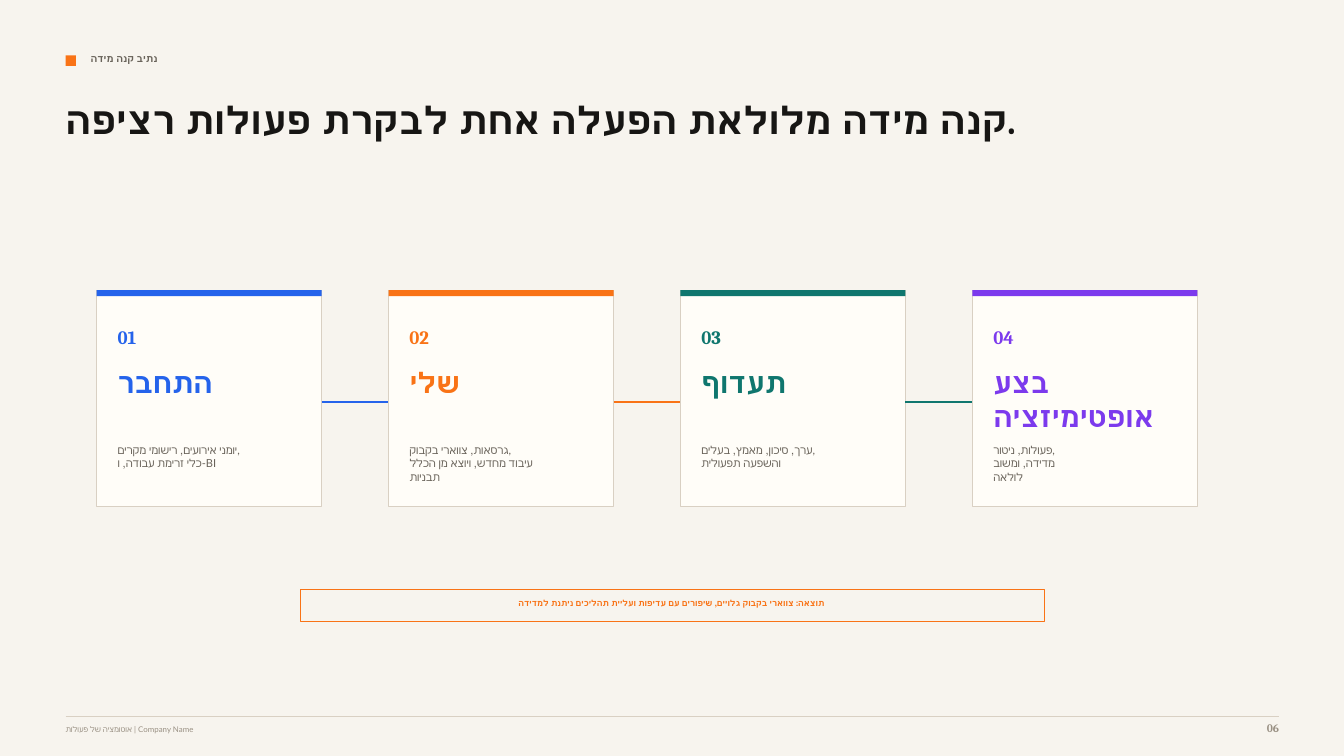
"""Build the four-step scale path slide."""
from lxml import etree
from pptx import Presentation
from pptx.dml.color import RGBColor
from pptx.enum.shapes import MSO_CONNECTOR, MSO_SHAPE
from pptx.enum.text import MSO_ANCHOR, MSO_AUTO_SIZE, PP_ALIGN
from pptx.oxml.ns import qn
from pptx.util import Pt

RECTANGLE = MSO_SHAPE.RECTANGLE
STRAIGHT = MSO_CONNECTOR.STRAIGHT
TOP = MSO_ANCHOR.TOP
NO_AUTOFIT = MSO_AUTO_SIZE.NONE
LEFT, CENTER, RIGHT = PP_ALIGN.LEFT, PP_ALIGN.CENTER, PP_ALIGN.RIGHT
color = RGBColor.from_string

HEADING_FONT, BODY_FONT = "Cambria", "Lato"
PAPER, CARD, RULE = "F7F4EE", "FFFDF8", "D9D0C3"
INK, GRAY, PALE, ORANGE = "171614", "69635A", "9A9184", "F97316"

MARGIN, CONTENT_WIDTH = 46.8, 866.9
CARD_LEFT, CARD_TOP, CARD_WIDTH, CARD_HEIGHT = 69, 207.2, 160.8, 154.8
CARD_PITCH, CARD_PADDING = 208.5, 15
LINK_Y = 287.1

STEPS = [
    ("התחבר", "2563EB", "יומני אירועים, רישומי מקרים,\nכלי זרימת עבודה, ו-BI"),
    ("שלי", ORANGE, "גרסאות, צווארי בקבוק,\nעיבוד מחדש, ויוצא מן הכלל\nתבניות"),
    ("תעדוף", "0F766E", "ערך, סיכון, מאמץ, בעלים,\nוהשפעה תפעולית"),
    ("בצע אופטימיזציה", "7C3AED", "פעולות, ניטור,\nמדידה, ומשוב\nלולאה"),
]

presentation = Presentation()
presentation.slide_width = Pt(960)
presentation.slide_height = Pt(540)
slide = presentation.slides.add_slide(presentation.slide_layouts[5])
slide.background.fill.solid()
slide.background.fill.fore_color.rgb = color(PAPER)


def write(box, text, font_name, size, hex_color, bold=True, align=LEFT):
    frame = box.text_frame
    frame.margin_left = frame.margin_right = frame.margin_top = frame.margin_bottom = 0
    frame.word_wrap = True
    frame.auto_size = NO_AUTOFIT
    frame.vertical_anchor = TOP
    frame.text = text
    for paragraph in frame.paragraphs:
        paragraph.alignment = align
        for run in paragraph.runs:
            run.font.name = font_name
            run.font.size = Pt(size)
            run.font.bold = bold
            run.font.color.rgb = color(hex_color)


def add_box(left, top, width, height, fill=None, line=None):
    shape = slide.shapes.add_shape(RECTANGLE, Pt(left), Pt(top), Pt(width), Pt(height))
    shape.shadow.inherit = False
    if fill:
        shape.fill.solid()
        shape.fill.fore_color.rgb = color(fill)
    else:
        shape.fill.background()
    if line:
        shape.line.color.rgb = color(line)
        shape.line.width = Pt(0.75)
    else:
        shape.line.fill.background()


title = slide.shapes.title
title.left, title.top, title.width, title.height = Pt(MARGIN), Pt(69.1), Pt(712.8), Pt(73.4)
write(title, "קנה מידה מלולאת הפעלה אחת לבקרת פעולות רציפה.", HEADING_FONT, 27, INK)

add_box(MARGIN, 39.6, 7.5, 7.5, ORANGE)

texts = [
    (64.8, 37.4, 465, 13.7, "נתיב קנה מידה", BODY_FONT, 7.1, GRAY, True, LEFT),
    (223.2, 427.5, 512.6, 10.1,
     "תוצאה: צווארי בקבוק גלויים, שיפורים עם עדיפות ועליית תהליכים ניתנת למדידה",
     BODY_FONT, 6, ORANGE, True, CENTER),
    (MARGIN, 517.7, 570, 10.8, "אוטומציה של פעולות | Company Name",
     BODY_FONT, 5.6, PALE, False, LEFT),
    (877.7, 514.8, 36, 13.7, "06", HEADING_FONT, 8.2, PALE, True, RIGHT),
]
lines = [(MARGIN, MARGIN + CONTENT_WIDTH, 511.6, RULE, 0.75)]

for index, (name, accent, detail) in enumerate(STEPS):
    left = CARD_LEFT + index * CARD_PITCH
    text_left = left + CARD_PADDING
    add_box(left, CARD_TOP, CARD_WIDTH, CARD_HEIGHT, CARD, RULE)
    add_box(left, CARD_TOP, CARD_WIDTH, 4.3, accent)
    texts += [
        (text_left, 232.6, 33, 18, f"{index + 1:02}", HEADING_FONT, 13.5, accent, True, LEFT),
        (text_left, 260.6, 120, 33, name, HEADING_FONT, 20.2, accent, True, LEFT),
        (text_left, 316.8, 124.6, 33, detail, BODY_FONT, 7.9, GRAY, False, LEFT),
    ]
    if index < len(STEPS) - 1:
        lines.append((left + CARD_WIDTH, left + CARD_PITCH, LINK_Y, accent, 1.5))

add_box(214.6, 421.4, 531.4, 22.3, line=ORANGE)

for start, end, y, hex_color, weight in lines:
    connector = slide.shapes.add_connector(STRAIGHT, Pt(start), Pt(y), Pt(end), Pt(y))
    connector.line.color.rgb = color(hex_color)
    connector.line.width = Pt(weight)
    etree.SubElement(connector._element.spPr, qn("a:effectLst"))

for left, top, width, height, text, font_name, size, hex_color, bold, align in texts:
    box = slide.shapes.add_textbox(Pt(left), Pt(top), Pt(width), Pt(height))
    write(box, text, font_name, size, hex_color, bold, align)

presentation.save("out.pptx")
